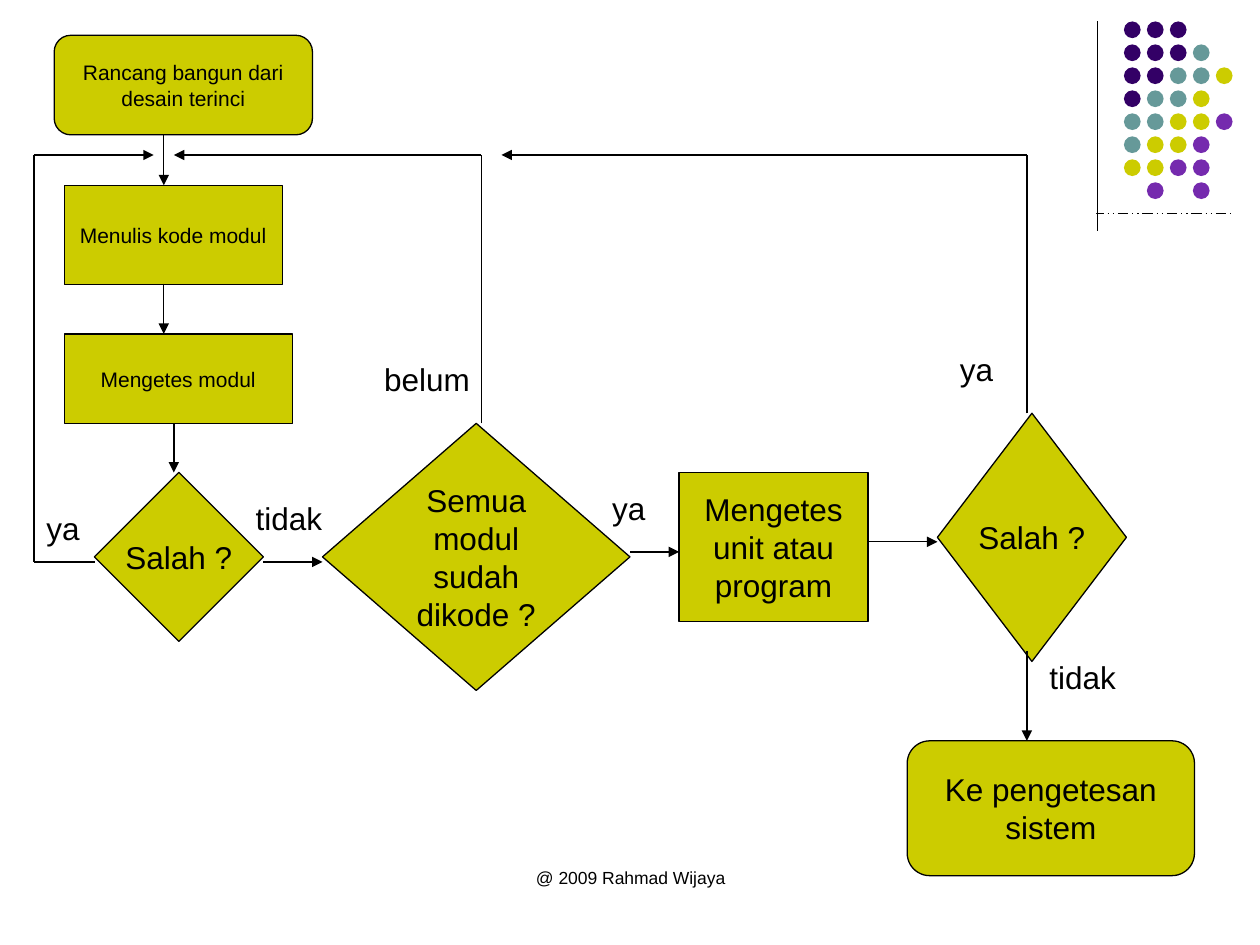
from itertools import pairwise

from lxml import etree
from pptx import Presentation
from pptx.dml.color import RGBColor
from pptx.enum.dml import MSO_LINE
from pptx.enum.shapes import MSO_CONNECTOR, MSO_SHAPE
from pptx.enum.text import MSO_ANCHOR, PP_ALIGN
from pptx.oxml.ns import qn
from pptx.util import Inches, Pt

TERMINAL = MSO_SHAPE.FLOWCHART_ALTERNATE_PROCESS
PROCESS = MSO_SHAPE.FLOWCHART_PROCESS
DECISION = MSO_SHAPE.FLOWCHART_DECISION
OVAL, RECT = MSO_SHAPE.OVAL, MSO_SHAPE.RECTANGLE
STRAIGHT = MSO_CONNECTOR.STRAIGHT
CENTER, LEFT = PP_ALIGN.CENTER, PP_ALIGN.LEFT
MIDDLE, TOP = MSO_ANCHOR.MIDDLE, MSO_ANCHOR.TOP
DASH_DOT_DOT = MSO_LINE.DASH_DOT_DOT

FONT = "Arial"
COLORS = {"ink": "000000", "paper": "FFFFFF", "D": "330066",
          "T": "669999", "Y": "CCCC00", "P": "752AAE"}
WIDTH, HEIGHT = 10, 7.5
COLS = 100  # the slide is a grid of 100 columns by 75 rows

DOT_ROWS = ["DDD", "DDDT", "DDTTY", "DTTY", "TTYYP", "TYYP", "YYPP", " P P"]

# kind, (column, row, columns, rows), text, size, wrap
STEPS = [
    (TERMINAL, (4.3, 2.8, 20.5, 7.9), "Rancang bangun dari desain terinci", 12, True),
    (PROCESS, (5.1, 14.7, 17.3, 7.9), "Menulis kode modul", 12, True),
    (PROCESS, (5.1, 26.5, 18.1, 7.1), "Mengetes modul", 12, True),
    (DECISION, (7.5, 37.5, 13.4, 13.4), "Salah ?", 18, False),
    (DECISION, (25.6, 33.6, 24.4, 21.2), "Semua modul sudah dikode ?", 18, True),
    (PROCESS, (53.9, 37.5, 15, 11.8), "Mengetes unit atau program", 18, True),
    (DECISION, (74.4, 32.8, 15, 19.7), "Salah ?", 18, False),
    (TERMINAL, (72, 58.8, 22.8, 10.7), "Ke pengetesan sistem", 18, True),
]

# corner points of each route; the arrowhead is at the last one
ROUTES = [
    [(13, 10.7), (13, 14.7)],
    [(13, 22.5), (13, 26.5)],
    [(13.8, 33.6), (13.8, 37.5)],
    [(7.5, 44.6), (2.7, 44.6), (2.7, 12.3), (12.2, 12.3)],
    [(20.9, 44.6), (25.6, 44.6)],
    [(38.2, 33.6), (38.2, 12.3), (13.8, 12.3)],
    [(50, 43.8), (53.9, 43.8)],
    [(68.9, 43), (74.4, 43)],
    [(81.5, 32.8), (81.5, 12.3), (39.8, 12.3)],
    [(81.5, 51.7), (81.5, 58.8)],
]

# text, column, row, columns
ANSWERS = [
    ("ya", 2.7, 39.9, 5.5), ("ya", 47.6, 38.3, 5.5), ("ya", 75.2, 27.3, 5.5),
    ("tidak", 19.3, 39.1, 7.9), ("belum", 29.5, 28.1, 10.2),
    ("tidak", 82.3, 51.7, 7.9),
]


def rgb(name):
    return RGBColor.from_string(COLORS[name])


def add_block(s, kind, box, fill, outline=False):
    sp = s.shapes.add_shape(kind, *map(Inches, box))
    sp.shadow.inherit = False
    sp.fill.solid()
    sp.fill.fore_color.rgb = rgb(fill)
    if outline:
        sp.line.color.rgb = rgb("ink")
        sp.line.width = Pt(0.75)
    else:
        sp.line.fill.background()
    return sp


def set_text(sp, text, size, align=CENTER, anchor=MIDDLE, wrap=True):
    tf = sp.text_frame
    tf.word_wrap = wrap
    tf.vertical_anchor = anchor
    p = tf.paragraphs[0]
    p.text = text
    p.alignment = align
    p.font.name, p.font.size = FONT, Pt(size)
    p.font.color.rgb = rgb("ink")


def add_line(s, start, end, arrow=False, dash=None):
    c = s.shapes.add_connector(STRAIGHT, *map(Inches, (*start, *end)))
    c.line.color.rgb = rgb("ink")
    c.line.width = Pt(0.75)
    if dash:
        c.line.dash_style = dash
    sp_pr = c._element.spPr
    if arrow:
        etree.SubElement(sp_pr.find(qn("a:ln")), qn("a:tailEnd"), type="triangle")
    etree.SubElement(sp_pr, qn("a:effectLst"))


def add_ornament(s, box):
    """Dot pattern with a rule on its left and a dashed rule below."""
    x, y, w, h = box
    pitch, dot = h / 9.1, h * 0.08
    add_line(s, (x, y), (x, y + h))
    for row, marks in enumerate(DOT_ROWS):
        for col, mark in enumerate(marks):
            if mark != " ":
                place = (x + 0.21 + col * pitch, y + row * pitch, dot, dot)
                add_block(s, OVAL, place, mark)
    rule_y = y + h * 0.92
    add_line(s, (WIDTH * 0.051, rule_y), (x + w, rule_y), dash=DASH_DOT_DOT)
    # White band that keeps the dashed rule out of the chart
    add_block(s, RECT, (WIDTH * 0.027, y + 1.3, WIDTH * 0.843, 0.39), "paper")


def add_footer(s, box):
    set_text(s.shapes.add_textbox(*map(Inches, box)),
             "@ 2009 Rahmad Wijaya", 10, anchor=TOP)


def add_flowchart(s, box):
    x, y, w, _ = box
    cell = w / COLS

    def at(col, row):
        return x + col * cell, y + row * cell

    # Steps and decisions
    for kind, (col, row, cols, rows), text, size, wrap in STEPS:
        place = (*at(col, row), cols * cell, rows * cell)
        set_text(add_block(s, kind, place, "Y", outline=True), text, size, wrap=wrap)

    # Routes between them
    for points in ROUTES:
        for start, end in pairwise(points):
            add_line(s, at(*start), at(*end), arrow=end == points[-1])

    # Answers beside the routes
    for text, col, row, cols in ANSWERS:
        place = (*at(col, row), cols * cell, 4 * cell)
        set_text(s.shapes.add_textbox(*map(Inches, place)), text, 18, LEFT, TOP)


def main():
    prs = Presentation()
    prs.slide_width, prs.slide_height = Inches(WIDTH), Inches(HEIGHT)
    s = prs.slides.add_slide(prs.slide_layouts[6])
    add_ornament(s, (8.71, 0.17, 1.09, 1.66))
    add_footer(s, (3.42, 6.83, 3.17, 0.5))
    add_flowchart(s, (0, 0, WIDTH, HEIGHT))
    prs.save("out.pptx")


if __name__ == "__main__":
    main()
